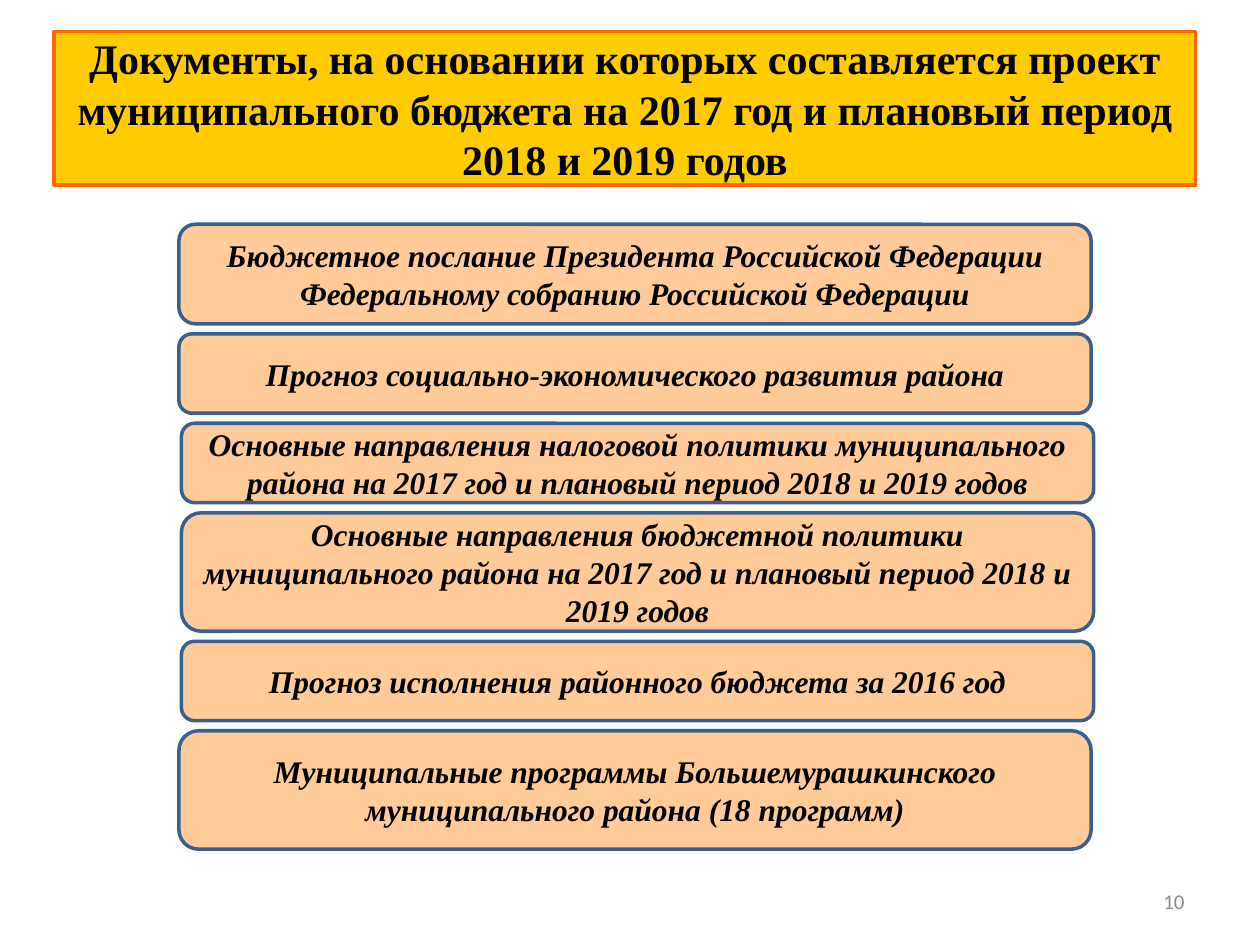
from lxml.etree import SubElement
from pptx import Presentation
from pptx.dml.color import RGBColor
from pptx.enum.shapes import MSO_SHAPE
from pptx.enum.text import MSO_ANCHOR, MSO_AUTO_SIZE, PP_ALIGN
from pptx.oxml.ns import qn
from pptx.util import Inches, Pt

TITLE = ("Документы, на основании которых составляется проект муниципального "
         "бюджета на 2017 год и плановый период 2018 и 2019 годов")
ITEMS = [
    (1.42, 0.79, "Бюджетное послание Президента Российской Федерации "
                 "Федеральному собранию Российской Федерации"),
    (1.42, 0.63, "Прогноз социально-экономического развития района"),
    (1.44, 0.63, "Основные направления налоговой политики муниципального "
                 "района на 2017 год и плановый период 2018 и 2019 годов"),
    (1.44, 0.94, "Основные направления бюджетной политики муниципального "
                 "района на 2017 год и плановый период 2018 и 2019 годов"),
    (1.44, 0.63, "Прогноз исполнения районного бюджета за 2016 год"),
    (1.42, 0.94, "Муниципальные программы Большемурашкинского "
                 "муниципального района (18 программ)"),
]
NUMBER = "10"

TOP, WIDTH, GAP = 1.78, 7.24, 0.08
SERIF = "Times New Roman"
BLACK = RGBColor(0x00, 0x00, 0x00)
GRAY = RGBColor(0x8C, 0x8C, 0x8C)
PEACH = RGBColor(0xFF, 0xCC, 0x99)
BLUE = RGBColor(0x3A, 0x5F, 0x8C)
GOLD = RGBColor(0xFF, 0xCC, 0x00)
ORANGE = RGBColor(0xFF, 0x66, 0x00)


def paint(shape, fill, line):
    shape.shadow.inherit = False
    shape.fill.solid()
    shape.fill.fore_color.rgb = fill
    shape.line.color.rgb = line
    shape.line.width = Pt(2)


def write(shape, text, size, color=BLACK, name=SERIF, align=PP_ALIGN.CENTER,
          bold=True, italic=False):
    frame = shape.text_frame
    frame.word_wrap = True
    frame.auto_size = MSO_AUTO_SIZE.NONE
    frame.vertical_anchor = MSO_ANCHOR.MIDDLE
    frame.text = text
    para = frame.paragraphs[0]
    para.alignment = align
    font = para.font
    font.name, font.size = name, Pt(size)
    font.bold, font.italic = bold, italic
    font.color.rgb = color


def main():
    deck = Presentation()
    deck.slide_width, deck.slide_height = Inches(10), Inches(7.5)
    slide = deck.slides.add_slide(deck.slide_layouts[5])

    title = slide.shapes.title
    title.left, title.top = Inches(0.43), Inches(0.25)
    title.width, title.height = Inches(9.06), Inches(1.22)
    shape = SubElement(title.element.spPr, qn("a:prstGeom"), prst="roundRect")
    SubElement(shape, qn("a:avLst"))
    paint(title, GOLD, ORANGE)
    write(title, TITLE, 24)

    top = TOP
    for left, height, text in ITEMS:
        box = slide.shapes.add_shape(
            MSO_SHAPE.ROUNDED_RECTANGLE,
            Inches(left), Inches(top), Inches(WIDTH), Inches(height))
        paint(box, PEACH, BLUE)
        write(box, text, 18, italic=True)
        top += height + GAP

    page = slide.shapes.add_textbox(
        Inches(7.17), Inches(6.95), Inches(2.33), Inches(0.4))
    write(page, NUMBER, 12, GRAY, "Calibri", PP_ALIGN.RIGHT, bold=False)

    deck.save("out.pptx")


if __name__ == "__main__":
    main()
